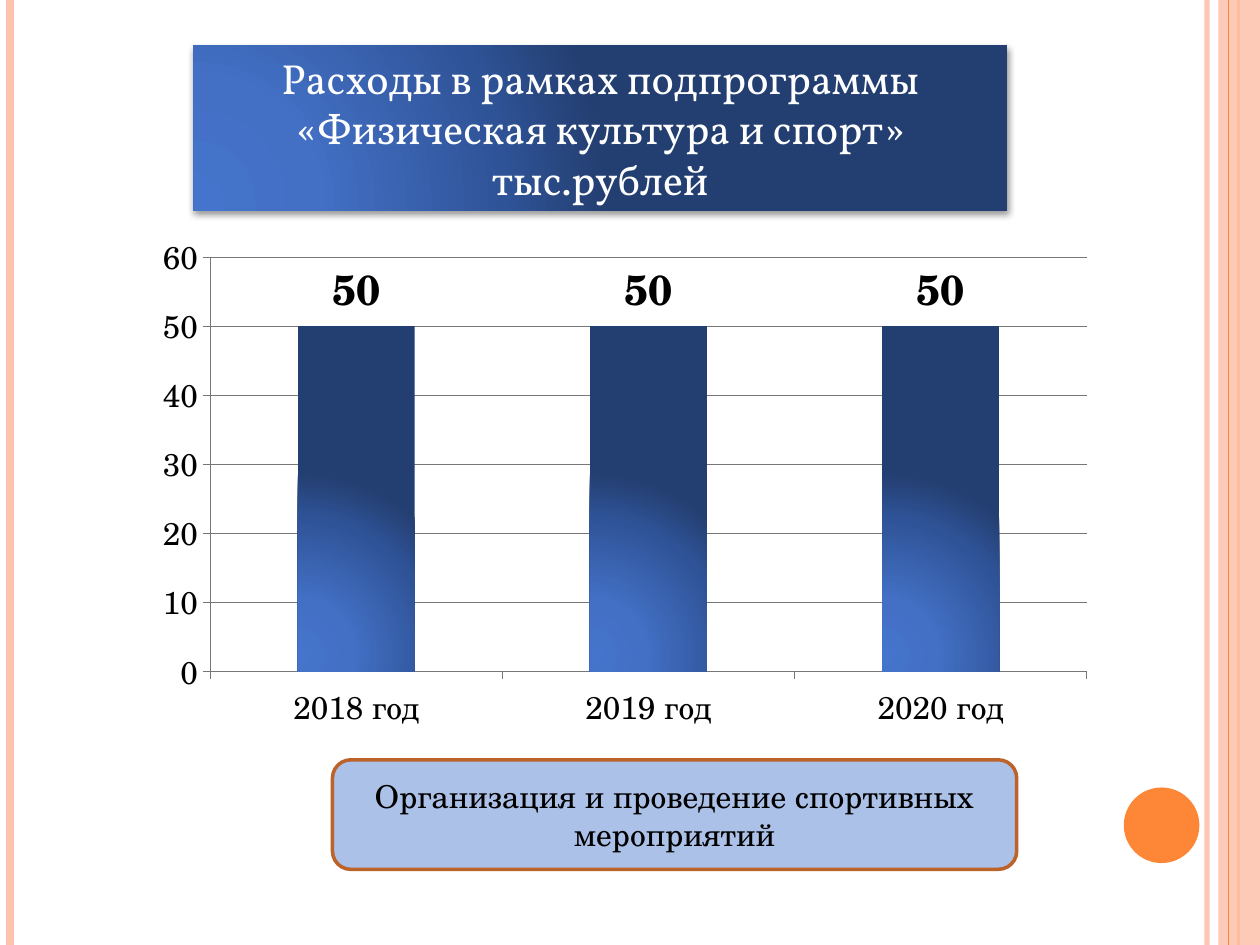
from lxml import etree
from pptx import Presentation
from pptx import util as u
from pptx.chart.data import CategoryChartData
from pptx.dml.color import RGBColor
from pptx.enum import chart as charts, shapes, text
from pptx.oxml import parse_xml
from pptx.oxml.ns import nsdecls, qn

NS = nsdecls("a")
STOPS = ((0, "4574CC"), (30, "4370C5"), (75, "2F5397"), (100, "233E70"))


def color(code):
    return RGBColor.from_string(code)


def write(frame, words, font="TeX Gyre Schola", size=18, ink="000000"):
    frame.word_wrap = True
    frame.vertical_anchor = text.MSO_ANCHOR.MIDDLE
    par = frame.paragraphs[0]
    par.alignment = text.PP_ALIGN.CENTER
    run = par.add_run()
    run.text = words
    style(run.font, font, size, ink)


def style(font, name, size, ink, bold=False):
    font.name, font.size, font.bold = name, u.Pt(size), bold
    font.color.rgb = color(ink)


def fade(props, alpha):
    tint = next(props.iter(qn("a:srgbClr")))
    etree.SubElement(tint, qn("a:alpha"), val=str(alpha * 1000))


def blend(props):
    stops = "".join(f'<a:gs pos="{pos * 1000}"><a:srgbClr val="{code}"/></a:gs>'
                    for pos, code in STOPS)
    grad = parse_xml(f'<a:gradFill {NS} rotWithShape="1"><a:gsLst>{stops}</a:gsLst>'
                     '<a:path path="circle"><a:fillToRect l="5000" t="100000" '
                     'r="120000" b="10000"/></a:path></a:gradFill>')
    props.replace(props.find(qn("a:solidFill")), grad)


class Deck:
    """Draws styled elements on the current slide."""

    font = "TeX Gyre Schola"
    ink = "000000"
    grey = "777777"

    def __init__(self):
        self.show = Presentation()
        self.show.slide_width, self.show.slide_height = u.Pt(720), u.Pt(540)
        self.slide = self.show.slides.add_slide(self.show.slide_layouts[6])

    def line(self, left, width, code, alpha=100):
        rule = self.slide.shapes.add_connector(
            shapes.MSO_CONNECTOR.STRAIGHT, u.Pt(left), 0, u.Pt(left), u.Pt(540))
        rule.line.width = u.Pt(width)
        rule.line.color.rgb = color(code)
        props = rule._element.spPr
        etree.SubElement(props, qn("a:effectLst"))
        if alpha < 100:
            fade(props, alpha)

    def shape(self, kind, box, fill, edge=None, alpha=100):
        item = self.slide.shapes.add_shape(kind, *map(u.Pt, box))
        item.shadow.inherit = False
        item.fill.solid()
        item.fill.fore_color.rgb = color(fill)
        if edge:
            item.line.color.rgb = color(edge)
            item.line.width = u.Pt(2)
        else:
            item.line.fill.background()
        if alpha < 100:
            fade(item._element.spPr, alpha)
        return item

    def title(self, box, words):
        item = self.shape(shapes.MSO_SHAPE.RECTANGLE, box, STOPS[0][1])
        props = item._element.spPr
        blend(props)
        props.find(qn("a:effectLst")).append(parse_xml(
            f'<a:outerShdw {NS} blurRad="{u.Pt(4)}" dist="{u.Pt(1.6)}" dir="5400000" '
            'rotWithShape="0"><a:srgbClr val="000000"><a:alpha val="42000"/>'
            '</a:srgbClr></a:outerShdw>'))
        write(item.text_frame, words, font="Vollkorn", size=24, ink="FFFFFF")

    def chart(self, box, cats, vals):
        data = CategoryChartData()
        data.categories = cats
        data.add_series("Series 1", vals)
        graph = self.slide.shapes.add_chart(
            charts.XL_CHART_TYPE.COLUMN_CLUSTERED, *map(u.Pt, box), data).chart
        graph.has_legend = graph.has_title = False
        style(graph.font, self.font, 18, self.ink)
        value = graph.value_axis
        value.minimum_scale, value.maximum_scale, value.major_unit = 0, 60, 10
        for part in (value, graph.category_axis, value.major_gridlines):
            part.format.line.color.rgb = color(self.grey)
            part.format.line.width = u.Pt(0.75)
        plot = graph.plots[0]
        plot.gap_width, plot.vary_by_categories = 150, False
        plot.has_data_labels = True
        labels = plot.data_labels
        labels.show_value = True
        labels.position = charts.XL_LABEL_POSITION.OUTSIDE_END
        style(labels.font, self.font, 24, self.ink, bold=True)
        bars = plot.series[0]
        bars.format.fill.solid()
        bars.format.fill.fore_color.rgb = color(STOPS[0][1])
        blend(bars._element.spPr)


def main():
    deck = Deck()
    pink, orange = "FEC3AE", "FE8637"
    deck.line(689.8, 3, pink, alpha=93)
    deck.line(5.8, 4.5, pink)
    deck.line(707.8, 1.5, orange)
    deck.shape(shapes.MSO_SHAPE.RECTANGLE, (696.2, 0, 23.8, 540), pink, alpha=87)
    deck.line(702, 0.75, orange)
    deck.shape(shapes.MSO_SHAPE.OVAL, (642.2, 450, 43.2, 43.2), orange)
    deck.title((110.5, 25.9, 465, 94.5),
               "Расходы в рамках подпрограммы «Физическая культура и спорт» тыс.рублей")
    deck.chart((82, 128, 550, 295), [f"{year} год" for year in range(2018, 2021)],
               (50, 50, 50))
    note = deck.shape(shapes.MSO_SHAPE.ROUNDED_RECTANGLE, (190, 434.2, 391, 62.6),
                      "ACC1E8", edge="BC6329")
    write(note.text_frame, "Организация и проведение спортивных мероприятий")
    deck.show.save("out.pptx")


if __name__ == "__main__":
    main()
